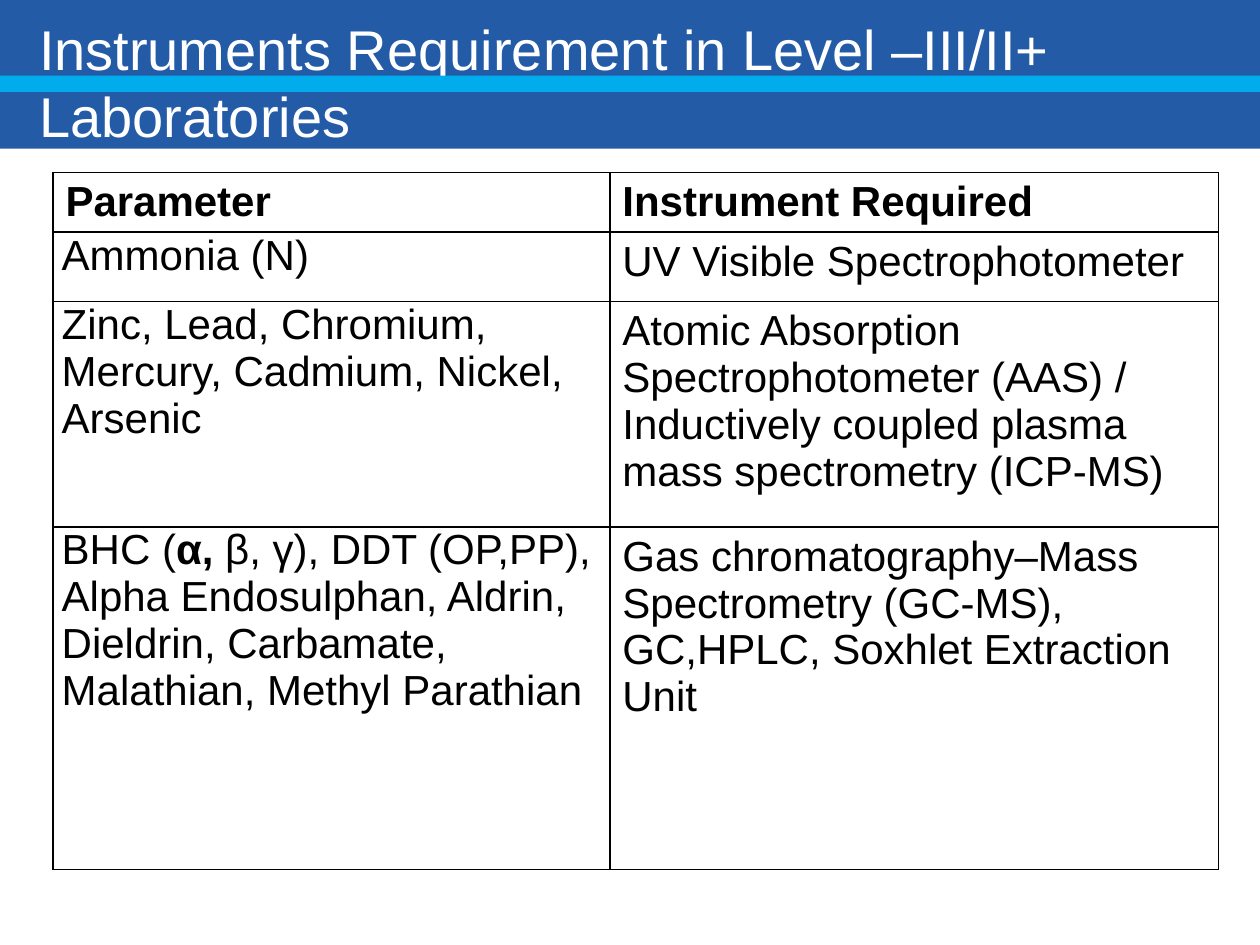
"""Build a slide listing the laboratory instruments required for each parameter."""
from pptx import Presentation, util as u
from pptx.dml.color import RGBColor
from pptx.enum import shapes, text
from pptx.oxml import parse_xml
from pptx.oxml.ns import nsdecls

TITLE = "Instruments Requirement in Level –III/II+ Laboratories"
ROWS = [
    ("Parameter", "Instrument Required"),
    ("Ammonia (N)", "UV Visible Spectrophotometer"),
    ("Zinc, Lead, Chromium, Mercury, Cadmium, Nickel, Arsenic",
     "Atomic Absorption Spectrophotometer (AAS) / Inductively coupled plasma "
     "mass spectrometry (ICP-MS)"),
    ("BHC (α, β, γ), DDT (OP,PP), Alpha Endosulphan, Aldrin, Dieldrin, "
     "Carbamate, Malathian, Methyl Parathian",
     "Gas chromatography–Mass Spectrometry (GC-MS), GC,HPLC, Soxhlet Extraction Unit"),
]
BOLD_TERM = "α,"
COLUMN_WIDTHS = [4.42, 4.83]
ROW_HEIGHTS = [0.45, 0.55, 1.79, 2.72]

FONT = "Arial"
BLUE = RGBColor(0x24, 0x5B, 0xA7)
CYAN = RGBColor(0x00, 0xAC, 0xEB)
WHITE = RGBColor(0xFF, 0xFF, 0xFF)
BLACK = RGBColor(0, 0, 0)


def paint(shape, color):
    shape.fill.solid()
    shape.fill.fore_color.rgb = color


def set_font(font, size, color, bold=False):
    font.name, font.size, font.bold = FONT, u.Pt(size), bold
    font.color.rgb = color


def add_title(page):
    title = page.shapes.title
    title.left, title.top = u.Inches(0), u.Inches(-0.04)
    title.width, title.height = u.Inches(10), u.Inches(1.22)
    paint(title, BLUE)
    frame = title.text_frame
    frame.text = TITLE
    frame.word_wrap = True
    frame.auto_size = text.MSO_AUTO_SIZE.NONE
    frame.vertical_anchor = text.MSO_ANCHOR.BOTTOM
    frame.margin_left, frame.margin_top = u.Inches(0.31), u.Inches(0.14)
    frame.margin_right = frame.margin_bottom = 0
    para = frame.paragraphs[0]
    para.alignment = text.PP_ALIGN.LEFT
    para.space_before = u.Pt(9.9)
    set_font(para.font, 32, WHITE)


def add_stripe(page):
    stripe = page.shapes.add_shape(
        shapes.MSO_SHAPE.RECTANGLE, 0, u.Inches(0.6), u.Inches(10), u.Inches(0.13))
    paint(stripe, CYAN)
    stripe.line.fill.background()
    stripe.shadow.inherit = False


def add_borders(cell):
    properties = cell._tc.get_or_add_tcPr()
    for index, side in enumerate(("lnL", "lnR", "lnT", "lnB")):
        properties.insert(index, parse_xml(
            f'<a:{side} {nsdecls("a")} w="{u.Pt(1)}"><a:solidFill>'
            f'<a:srgbClr val="{BLACK}"/></a:solidFill></a:{side}>'))


def fill_cell(cell, words, header, narrow):
    paint(cell, WHITE)
    add_borders(cell)
    if narrow:
        cell.margin_left = cell.margin_right = u.Inches(0.07)
        cell.margin_top = cell.margin_bottom = 0
    para = cell.text_frame.paragraphs[0]
    set_font(para.font, 24, BLACK, header)
    before, term, after = words.partition(BOLD_TERM)
    for part in filter(None, (before, term, after)):
        span = para.add_run()
        span.text = part
        if part == BOLD_TERM:
            span.font.bold = True


def add_instruments(page):
    table = page.shapes.add_table(
        len(ROWS), len(COLUMN_WIDTHS), u.Inches(0.42), u.Inches(1.37),
        u.Inches(sum(COLUMN_WIDTHS)), u.Inches(sum(ROW_HEIGHTS))).table
    table.first_row = table.horz_banding = False
    for column, width in zip(table.columns, COLUMN_WIDTHS):
        column.width = u.Inches(width)
    for row, height in zip(table.rows, ROW_HEIGHTS):
        row.height = u.Inches(height)
    for r, row in enumerate(ROWS):
        for c, words in enumerate(row):
            fill_cell(table.cell(r, c), words, header=r == 0, narrow=r > 0 and c == 0)


def main():
    deck = Presentation()
    deck.slide_width, deck.slide_height = u.Inches(10), u.Inches(7.5)
    page = deck.slides.add_slide(deck.slide_layouts.get_by_name("Title Only"))
    add_title(page)
    add_stripe(page)
    add_instruments(page)
    deck.save("out.pptx")


if __name__ == "__main__":
    main()
